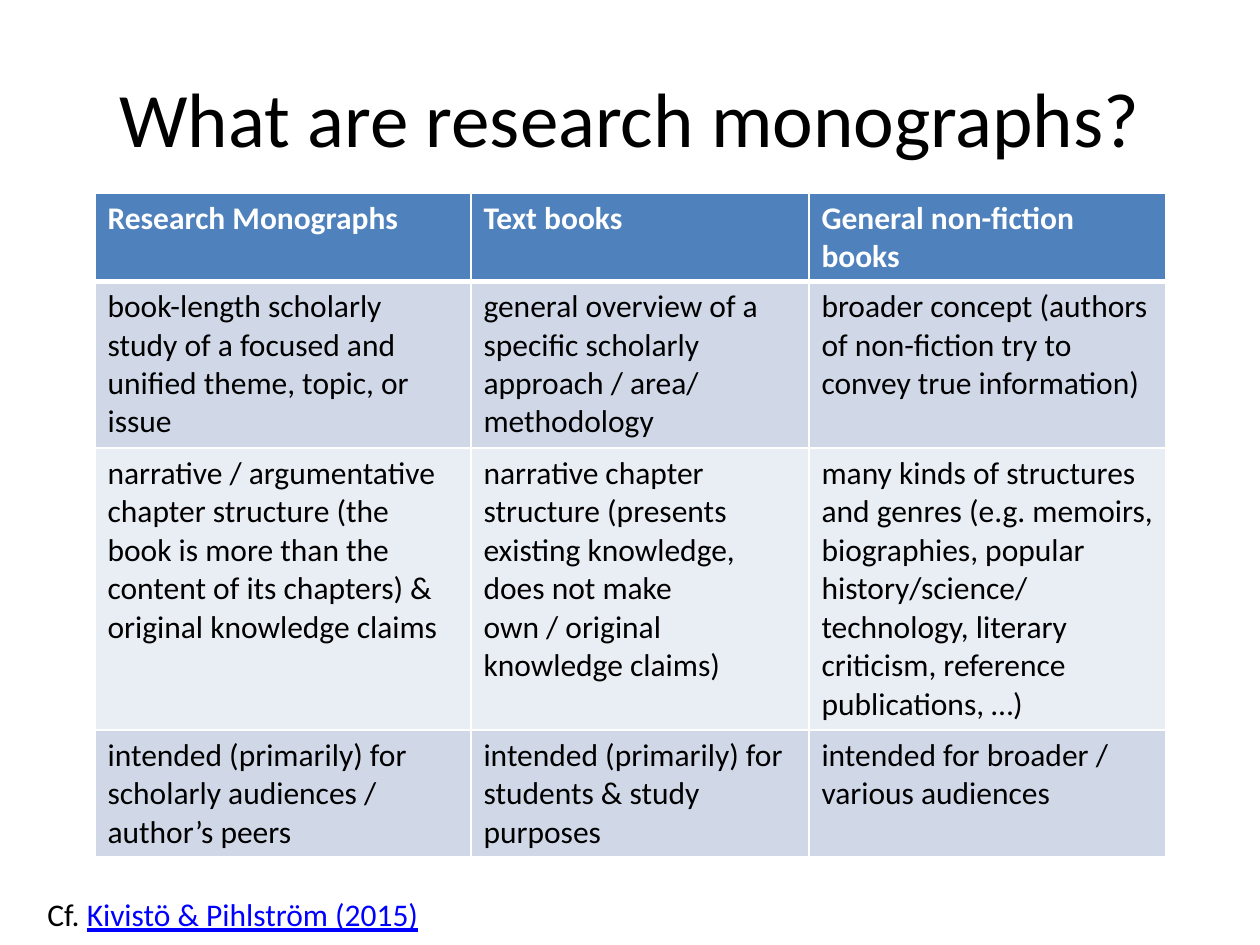
from pptx import Presentation
from pptx.dml.color import RGBColor as Rgb
from pptx.enum.text import MSO_ANCHOR as Anchor, PP_ALIGN as Align
from pptx.oxml import parse_xml as to_xml
from pptx.oxml.ns import nsdecls
from pptx.util import Emu, Pt

SCALE = 914400 / 126
FONT = "Calibri"
COLORS = {
    "black": "000000",
    "white": "FFFFFF",
    "head": "4F81BD",
    "odd": "D0D8E8",
    "even": "E9EDF4",
    "link": "0000FF",
}
COLS = [376, 338, 357]
ROWS = [88, 167, 282, 127]
CELLS = [
    ["Research Monographs", "Text books", "General non-fiction books"],
    [
        "book-length scholarly study of a focused and unified theme, topic, or issue",
        "general overview of a specific scholarly approach / area/ methodology",
        "broader concept (authors of non-fiction try to convey true information)",
    ],
    [
        "narrative / argumentative chapter structure (the book is more than "
        "the content of its chapters) & original knowledge claims",
        "narrative chapter structure (presents existing knowledge, "
        "does not make \vown / original knowledge claims)",
        "many kinds of structures and genres (e.g. memoirs, biographies, popular "
        "history/science/\ntechnology, literary criticism, reference publications, …)",
    ],
    [
        "intended (primarily) for scholarly audiences / author’s peers",
        "intended (primarily) for students & study purposes",
        "intended for broader / various audiences",
    ],
]


def px(size):
    return Emu(round(size * SCALE))


def style(run, size, color, bold=False):
    font = run.font
    font.name = FONT
    font.size = Pt(size)
    font.bold = bold
    font.color.rgb = Rgb.from_string(COLORS[color])


def add_text(slide, box, text, size):
    frame = slide.shapes.add_textbox(*map(px, box)).text_frame
    frame.word_wrap = True
    frame.text = text
    para = frame.paragraphs[0]
    style(para.runs[0], size, "black")
    return frame, para


def add_title(slide):
    box = (63, 38, 1134, 157)
    frame, para = add_text(slide, box, "What are research monographs?", 44)
    frame.vertical_anchor = Anchor.MIDDLE
    para.alignment = Align.CENTER


def add_source(slide):
    para = add_text(slide, (35, 889, 1162, 50), "Cf. ", 18)[1]
    run = para.add_run()
    run.text = "Kivistö & Pihlström (2015)"
    style(run, 18, "link")
    run.font.underline = True


def set_edges(cell, top, bottom):
    props = cell._tc.get_or_add_tcPr()
    edges = {"lnL": 1, "lnR": 1, "lnT": top, "lnB": bottom}
    for spot, (tag, width) in enumerate(edges.items()):
        props.insert(spot, to_xml(
            f'<a:{tag} {nsdecls("a")} w="{Pt(width)}"><a:solidFill>'
            f'<a:srgbClr val="{COLORS["white"]}"/></a:solidFill></a:{tag}>'
        ))


def fill_cell(cell, text, row):
    head = row == 0
    shade = "head" if head else "odd" if row % 2 else "even"
    cell.fill.solid()
    cell.fill.fore_color.rgb = Rgb.from_string(COLORS[shade])
    set_edges(cell, 3 if row == 1 else 1, 3 if head else 1)
    cell.text_frame.text = text
    for para in cell.text_frame.paragraphs:
        for run in para.runs:
            style(run, 18, "white" if head else "black", head)


def add_grid(slide):
    box = (95, 193, sum(COLS), sum(ROWS))
    table = slide.shapes.add_table(len(ROWS), len(COLS), *map(px, box)).table
    for col, width in zip(table.columns, COLS):
        col.width = px(width)
    for row, height in zip(table.rows, ROWS):
        row.height = px(height)
    for row, texts in enumerate(CELLS):
        for col, text in enumerate(texts):
            fill_cell(table.cell(row, col), text, row)


def main():
    deck = Presentation()
    deck.slide_width, deck.slide_height = px(1260), px(945)
    slide = deck.slides.add_slide(deck.slide_layouts[6])
    add_title(slide)
    add_grid(slide)
    add_source(slide)
    deck.save("out.pptx")


if __name__ == "__main__":
    main()
